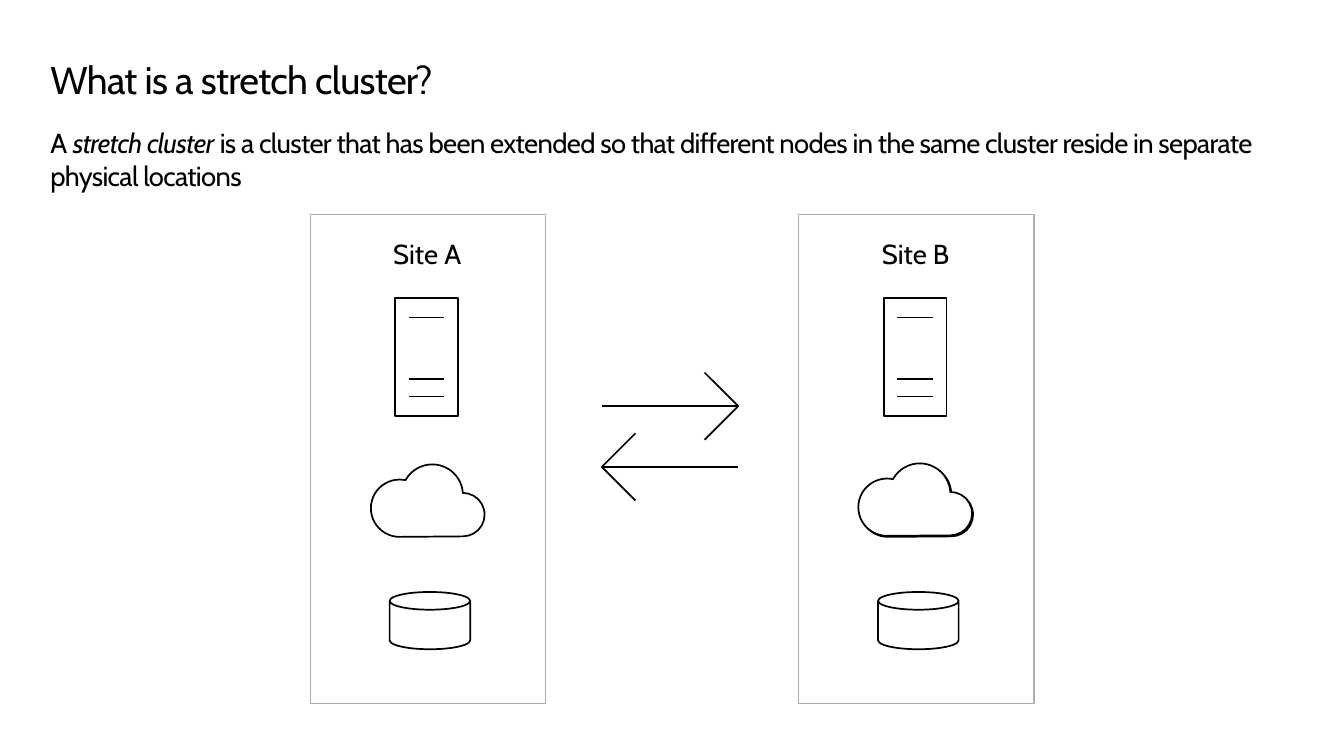
"""Build a slide that explains a stretch cluster across two sites."""
from pptx import Presentation
from pptx.dml.color import RGBColor
from pptx.enum.shapes import MSO_SHAPE as Shape
from pptx.enum.text import MSO_ANCHOR as Anchor, PP_ALIGN as Align
from pptx.oxml import parse_xml
from pptx.oxml.ns import nsdecls
from pptx.util import Inches, Pt

CELL = Inches(0.1)
INK, PAPER, FRAME = "000000", "FFFFFF", "AEAEAE"


def paint(shape, fill=None, line=INK, width=1.25):
    if fill:
        shape.fill.solid()
        shape.fill.fore_color.rgb = RGBColor.from_string(fill)
    else:
        shape.fill.background()
    shape.line.color.rgb = RGBColor.from_string(line)
    shape.line.width = Pt(width)
    shape.shadow.inherit = False


def outline(strokes, left, top, fill=None, close=False):
    contours = [[((left + x) * CELL, (top + y) * CELL) for x, y in stroke] for stroke in strokes]
    builder = page.shapes.build_freeform(*contours[0][0], scale=1.0)
    for number, contour in enumerate(contours):
        if number:
            builder.move_to(*contour[0])
        builder.add_line_segments(contour[1:], close=close)
    shape = builder.convert_to_shape()
    paint(shape, fill)
    return shape


deck = Presentation()
deck.slide_width, deck.slide_height = 136 * CELL, int(76.5 * CELL)
page = deck.slides.add_slide(deck.slide_layouts[6])

server = [[(6.35, 5.7), (6.35, 12), (0, 12), (0, 0), (6.35, 0), (6.35, 5.7)]]
server += [[(1.35, y), (4.95, y)] for y in (2, 8.2, 10)]

cloud = [(2.9, 7.3), (0, 4.4), (6.2, 0), (11.5, 5.1)]
cloud_arcs = [(2.9, 90, 192), (3.1, 209, 147), (2.2, 270, 180)]

site_top = 21.7
sites = [("Site A", 31.4, [0]), ("Site B", 80.83, [0, -0.1])]
labels = []
for name, left, cloud_shifts in sites:
    frame = page.shapes.add_shape(
        Shape.RECTANGLE, *(int(n * CELL) for n in (left, site_top, 23.8, 49.5)))
    paint(frame, PAPER, FRAME, 0.85)
    outline(server, left + 8.6, site_top + 8.43)
    disk = page.shapes.add_shape(
        Shape.CAN, *(int(n * CELL) for n in (left + 8.03, site_top + 38.2, 8.15, 5.8)))
    disk.adjustments[0] = 0.31
    paint(disk)
    for shift in cloud_shifts:
        shape = outline([cloud], left + 6.13 + shift, site_top + 25.33 + shift, PAPER, True)
        corners = shape._element.xpath(".//a:lnTo")
        for corner, (radius, start, sweep) in zip(corners, cloud_arcs):
            reach = int(radius * CELL)
            arc = parse_xml(
                f'<a:arcTo {nsdecls("a")} wR="{reach}" hR="{reach}" '
                f'stAng="{start * 60000}" swAng="{sweep * 60000}"/>')
            corner.getparent().replace(corner, arc)
    labels.append(((left + 3.73, 23.5, 16.2, 4.4), [(name, False)], 20, None,
                   {"alignment": Align.CENTER}, {}))

right_arrow = [[(10.4, 0), (13.8, 3.4), (10.4, 6.8)], [(13.8, 3.4), (0, 3.4)]]
left_arrow = [[(13.8 - x, y + 6.15) for x, y in stroke] for stroke in right_arrow]
outline(right_arrow + left_arrow, 60.9, 37.7)

flush = {"margin_left": 0, "margin_top": 0, "margin_bottom": 0}
title = [("What is a stretch cluster?", False)]
definition = [
    ("A ", False),
    ("stretch cluster", True),
    (" is a cluster that has been extended so that different nodes in the same cluster "
     "reside in separate physical locations", False),
]
texts = [
    ((5.1, 6.2, 126.1, 4.5), title, 28, "-50", {"line_spacing": 0.9}, flush),
    ((5.1, 12.5, 126.1, 7.4), definition, 20, "-50", {"space_before": Pt(12)},
     {**flush, "margin_bottom": Inches(0.05), "vertical_anchor": Anchor.BOTTOM}),
]
for place, pieces, size, tracking, para_format, box_format in texts + labels:
    box = page.shapes.add_textbox(*(int(n * CELL) for n in place)).text_frame
    for key, value in {"word_wrap": True, **box_format}.items():
        setattr(box, key, value)
    para = box.paragraphs[0]
    for key, value in para_format.items():
        setattr(para, key, value)
    for words, italic in pieces:
        span = para.add_run()
        span.text = words
        for key, value in {"name": "Cabin", "size": Pt(size), "italic": italic}.items():
            setattr(span.font, key, value)
        span.font.color.rgb = RGBColor.from_string(INK)
        if tracking:
            span.font._element.set("spc", tracking)

deck.save("out.pptx")
